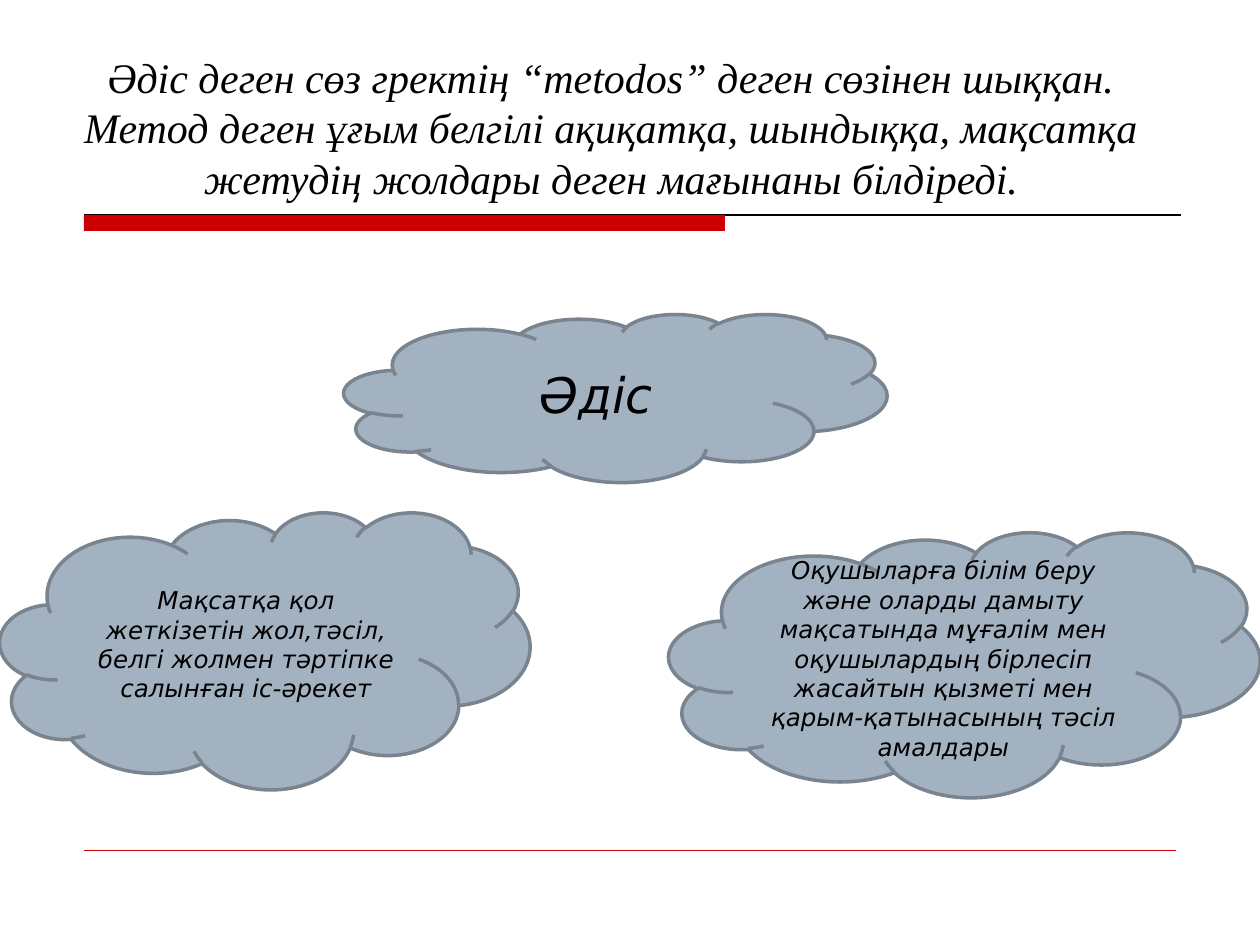
from dataclasses import dataclass

from pptx import Presentation
from pptx.dml.color import RGBColor
from pptx.enum.shapes import MSO_CONNECTOR, MSO_SHAPE
from pptx.enum.text import MSO_ANCHOR, PP_ALIGN
from pptx.oxml.ns import qn
from pptx.util import Emu, Pt

PX_PER_INCH = 126
BLACK = RGBColor(0x00, 0x00, 0x00)
RED = RGBColor(0xCC, 0x00, 0x00)
CLOUD_FILL = RGBColor(0xA3, 0xB2, 0xC1)
CLOUD_LINE = RGBColor(0x79, 0x84, 0x8F)


@dataclass
class Cloud:
    left: int
    top: int
    width: int
    height: int
    text: str
    size: int = 14


TITLE = (
    "Әдіс деген сөз гректің “metodos” деген сөзінен шыққан. "
    "Метод деген ұғым белгілі ақиқатқа, шындыққа, мақсатқа "
    "жетудің жолдары деген мағынаны білдіреді."
)
CLOUDS = [
    Cloud(344, 314, 543, 168, "Әдіс", size=28),
    Cloud(0, 512, 530, 277,
          "Мақсатқа қол жеткізетін жол,тәсіл, белгі жолмен тәртіпке "
          "салынған іс-әрекет"),
    Cloud(669, 532, 591, 265,
          "Оқушыларға білім беру және оларды дамыту мақсатында мұғалім мен "
          "оқушылардың бірлесіп жасайтын қызметі мен қарым-қатынасының тәсіл "
          "амалдары"),
]


def px(length: int) -> Emu:
    return Emu(round(length * 914400 / PX_PER_INCH))


def write_text(shape, text: str, *, font: str, size: int, anchor) -> None:
    frame = shape.text_frame
    frame.word_wrap = True
    frame.vertical_anchor = anchor
    para = frame.paragraphs[0]
    para.alignment = PP_ALIGN.CENTER
    span = para.add_run()
    span.text = text
    span.font.name = font
    span.font.size = Pt(size)
    span.font.italic = True
    span.font.color.rgb = BLACK


def draw_rule(page, left: int, right: int, y: int, color: RGBColor, weight: float) -> None:
    rule = page.shapes.add_connector(MSO_CONNECTOR.STRAIGHT, px(left), px(y), px(right), px(y))
    rule.line.color.rgb = color
    rule.line.width = Pt(weight)
    properties = rule._element.spPr
    properties.append(properties.makeelement(qn("a:effectLst"), {}))


def draw_cloud(page, cloud: Cloud) -> None:
    shape = page.shapes.add_shape(
        MSO_SHAPE.CLOUD, px(cloud.left), px(cloud.top), px(cloud.width), px(cloud.height))
    shape.shadow.inherit = False
    shape.fill.solid()
    shape.fill.fore_color.rgb = CLOUD_FILL
    shape.line.color.rgb = CLOUD_LINE
    shape.line.width = Pt(2)
    write_text(shape, cloud.text, font="DejaVu Sans", size=cloud.size, anchor=MSO_ANCHOR.MIDDLE)


def main() -> None:
    deck = Presentation()
    deck.slide_width, deck.slide_height = px(1260), px(945)
    page = deck.slides.add_slide(deck.slide_layouts[6])

    # Red bar with a thin rule, and the rule at the foot
    draw_rule(page, 84, 1181, 215, BLACK, 0.75)
    bar = page.shapes.add_shape(MSO_SHAPE.RECTANGLE, px(84), px(215), px(641), px(16))
    bar.shadow.inherit = False
    bar.fill.solid()
    bar.fill.fore_color.rgb = RED
    bar.line.fill.background()
    draw_rule(page, 84, 1176, 850, RED, 0.25)

    # Title
    box = page.shapes.add_textbox(px(44), px(45), px(1134), px(286))
    write_text(box, TITLE, font="Times New Roman", size=24, anchor=MSO_ANCHOR.TOP)

    # Clouds
    for cloud in CLOUDS:
        draw_cloud(page, cloud)

    deck.save("out.pptx")


if __name__ == "__main__":
    main()
